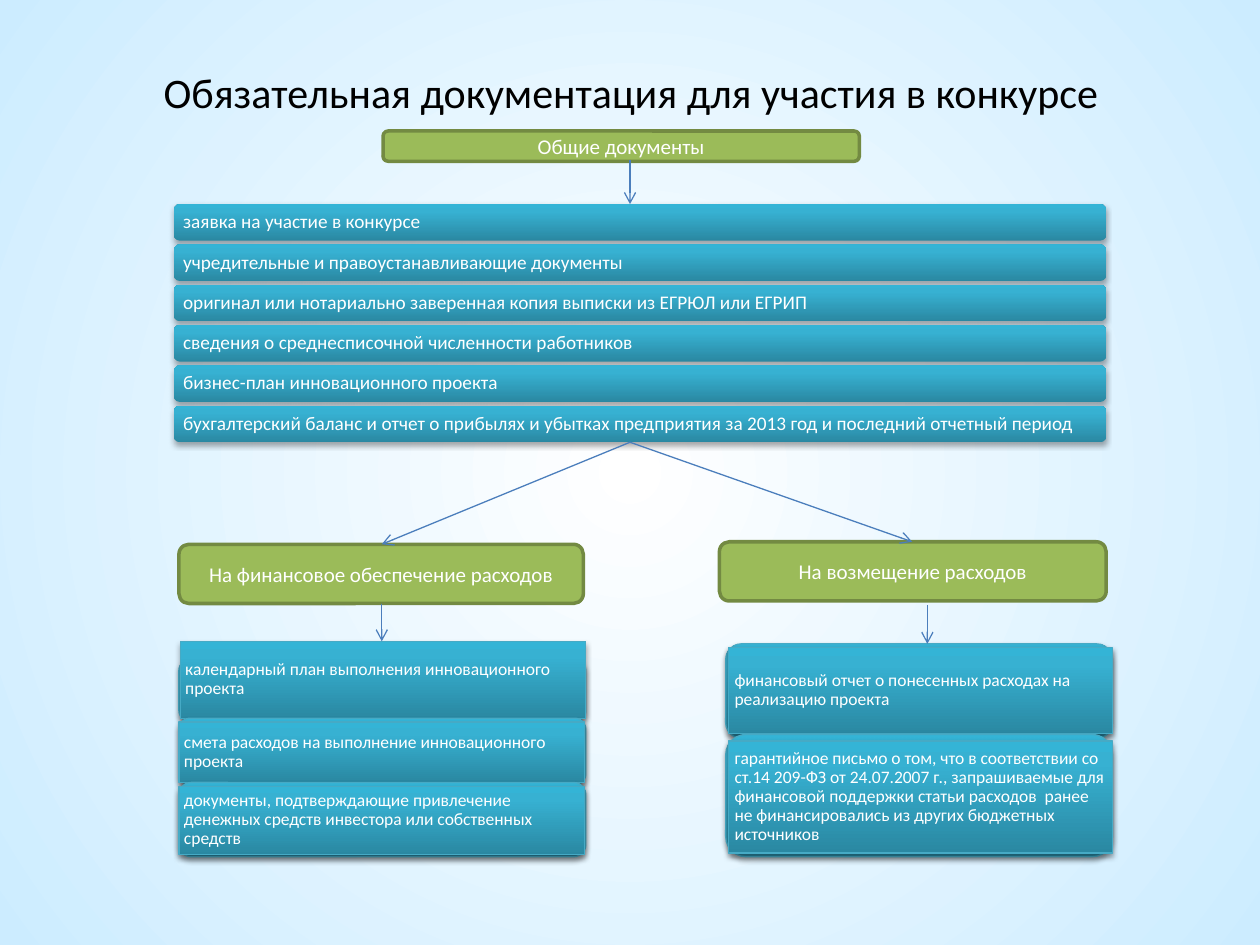
from pptx import Presentation
from pptx.dml.color import RGBColor
from pptx.enum.shapes import MSO_CONNECTOR, MSO_SHAPE
from pptx.enum.text import MSO_ANCHOR, PP_ALIGN
from pptx.oxml import parse_xml
from pptx.oxml.ns import nsdecls, qn
from pptx.util import Inches, Pt

TITLE = "Обязательная документация для участия в конкурсе"
COMMON_DOCUMENTS = [
    "заявка на участие в конкурсе",
    "учредительные и правоустанавливающие документы",
    "оригинал или нотариально заверенная копия выписки из ЕГРЮЛ или ЕГРИП",
    "сведения о среднесписочной численности работников",
    "бизнес-план инновационного проекта",
    "бухгалтерский баланс и отчет о прибылях и убытках предприятия "
    "за 2013 год и последний отчетный период",
]
# Each document: text, backing box, front box, text inset
FUNDING_DOCUMENTS = [
    ("календарный план выполнения инновационного проекта",
     (1.42, 5.24, 3.23, 0.48), (1.43, 5.09, 3.22, 0.61), 0.04),
    ("смета расходов на выполнение инновационного проекта",
     (1.42, 5.7, 3.23, 0.53), (1.42, 5.73, 3.22, 0.48), 0.04),
    ("документы, подтверждающие привлечение денежных средств инвестора "
     "или собственных средств",
     (1.42, 6.21, 3.23, 0.59), (1.42, 6.24, 3.22, 0.54), 0.04),
]
REFUND_DOCUMENTS = [
    ("финансовый отчет о понесенных расходах на реализацию проекта",
     (5.76, 5.11, 3.07, 0.75), (5.78, 5.14, 3.05, 0.68), 0.05),
    ("гарантийное письмо о том, что в соответствии со ст.14 209-ФЗ от "
     "24.07.2007 г., запрашиваемые для финансовой поддержки статьи расходов  "
     "ранее не финансировались из других бюджетных источников",
     (5.76, 5.83, 3.07, 0.97), (5.78, 5.88, 3.05, 0.89), 0.05),
]
ARROWS = [
    ((5, 3.51), (3.03, 4.32)),
    ((5, 3.51), (7.24, 4.3)),
    ((3.03, 4.79), (3.03, 5.09)),
    ((7.36, 4.8), (7.36, 5.11)),
    ((5, 1.27), (5, 1.62)),
]


def rgb(value):
    return RGBColor.from_string(value)


def gradient_xml(stops, direction):
    stop_xml = "".join(
        f'<a:gs pos="{place * 1000}"><a:srgbClr val="{color}"/></a:gs>'
        for place, color in stops)
    return (f'<a:gradFill {nsdecls("a")} rotWithShape="1">'
            f"<a:gsLst>{stop_xml}</a:gsLst>{direction}</a:gradFill>")


class DocumentSlide:
    FONT = "Calibri"
    WHITE, BLACK = "FFFFFF", "000000"
    GREEN, GREEN_EDGE = "9BBB59", "738A42"
    TEAL_EDGE, ARROW = "46AAC5", "4B7EBC"
    TEAL = [(0, "2A88A2"), (80, "37B1D2"), (100, "34B4D6")]

    def __init__(self, deck):
        self.slide = deck.slides.add_slide(deck.slide_layouts[5])

    def background(self, center, edge):
        circle = ('<a:path path="circle"><a:fillToRect l="50000" t="50000" '
                  'r="50000" b="50000"/></a:path>')
        fill = gradient_xml([(0, center), (100, edge)], circle)
        self.slide.element.cSld.insert(0, parse_xml(
            f'<p:bg {nsdecls("p", "a")}><p:bgPr>{fill}<a:effectLst/></p:bgPr></p:bg>'))

    def set_text(self, shape, text, size, color, align, inset=None, spacing=None):
        frame = shape.text_frame
        frame.text = text
        frame.word_wrap = True
        frame.vertical_anchor = MSO_ANCHOR.MIDDLE
        if inset is not None:
            frame.margin_left = frame.margin_right = Inches(inset)
            frame.margin_top = frame.margin_bottom = Inches(inset)
        paragraph = frame.paragraphs[0]
        paragraph.alignment = align
        paragraph.line_spacing = spacing
        font = paragraph.runs[0].font
        font.name, font.size = self.FONT, Pt(size)
        font.color.rgb = rgb(color)

    def title(self, text, left, top, width, height):
        heading = self.slide.shapes.title
        heading.left, heading.top = Inches(left), Inches(top)
        heading.width, heading.height = Inches(width), Inches(height)
        self.set_text(heading, text, 24, self.BLACK, PP_ALIGN.CENTER)

    def box(self, kind, bounds, edge=None, weight=0.75):
        shape = self.slide.shapes.add_shape(kind, *map(Inches, bounds))
        shape.shadow.inherit = False
        if edge:
            shape.line.color.rgb = rgb(edge)
            shape.line.width = Pt(weight)
        else:
            shape.line.fill.background()
        return shape

    def header(self, text, *bounds):
        shape = self.box(MSO_SHAPE.ROUNDED_RECTANGLE, bounds, self.GREEN_EDGE, 2)
        shape.fill.solid()
        shape.fill.fore_color.rgb = rgb(self.GREEN)
        self.set_text(shape, text, 12, self.WHITE, PP_ALIGN.CENTER)

    def teal_box(self, kind, bounds, edge=None):
        shape = self.box(kind, bounds, edge)
        shape.fill.gradient()
        properties = shape.element.spPr
        properties.replace(
            properties.find(qn("a:gradFill")),
            parse_xml(gradient_xml(self.TEAL, '<a:lin ang="16200000" scaled="0"/>')))
        properties.find(qn("a:effectLst")).append(parse_xml(
            f'<a:outerShdw {nsdecls("a")} blurRad="{Pt(3.1)}" dist="{Pt(1.8)}" '
            'dir="5400000" rotWithShape="0"><a:srgbClr val="000000">'
            '<a:alpha val="35000"/></a:srgbClr></a:outerShdw>'))
        return shape

    def bar(self, text, *bounds):
        shape = self.teal_box(MSO_SHAPE.ROUNDED_RECTANGLE, bounds)
        self.set_text(shape, text, 11, self.WHITE, PP_ALIGN.LEFT, 0.06, 0.9)

    def card(self, text, back, front, inset):
        self.teal_box(MSO_SHAPE.ROUNDED_RECTANGLE, back, self.TEAL_EDGE)
        shape = self.teal_box(MSO_SHAPE.RECTANGLE, front, self.TEAL_EDGE)
        self.set_text(shape, text, 10, self.WHITE, PP_ALIGN.LEFT, inset, 0.9)

    def arrow(self, start, end):
        connector = self.slide.shapes.add_connector(
            MSO_CONNECTOR.STRAIGHT, *map(Inches, start + end))
        connector.line.color.rgb = rgb(self.ARROW)
        connector.line.width = Pt(0.75)
        properties = connector.element.spPr
        properties.find(qn("a:ln")).append(
            parse_xml(f'<a:tailEnd {nsdecls("a")} type="arrow"/>'))
        properties.append(parse_xml(f'<a:effectLst {nsdecls("a")}/>'))


def main():
    deck = Presentation()
    deck.slide_width, deck.slide_height = Inches(10), Inches(7.5)
    page = DocumentSlide(deck)
    page.background("FFFFFF", "CCECFF")
    page.title(TITLE, 0.51, 0.3, 9, 0.85)

    # Documents common to all applicants
    for row, text in enumerate(COMMON_DOCUMENTS):
        page.bar(text, 1.38, 1.62 + row * 0.32, 7.4, 0.29)

    # Two kinds of support and their documents
    page.header("На финансовое обеспечение расходов", 1.42, 4.32, 3.21, 0.47)
    page.header("На возмещение расходов", 5.71, 4.3, 3.07, 0.47)
    for document in FUNDING_DOCUMENTS + REFUND_DOCUMENTS:
        page.card(*document)

    # Top header and the arrows between levels
    page.header("Общие документы", 3.04, 1.04, 3.78, 0.24)
    for start, end in ARROWS:
        page.arrow(start, end)

    deck.save("out.pptx")


if __name__ == "__main__":
    main()
